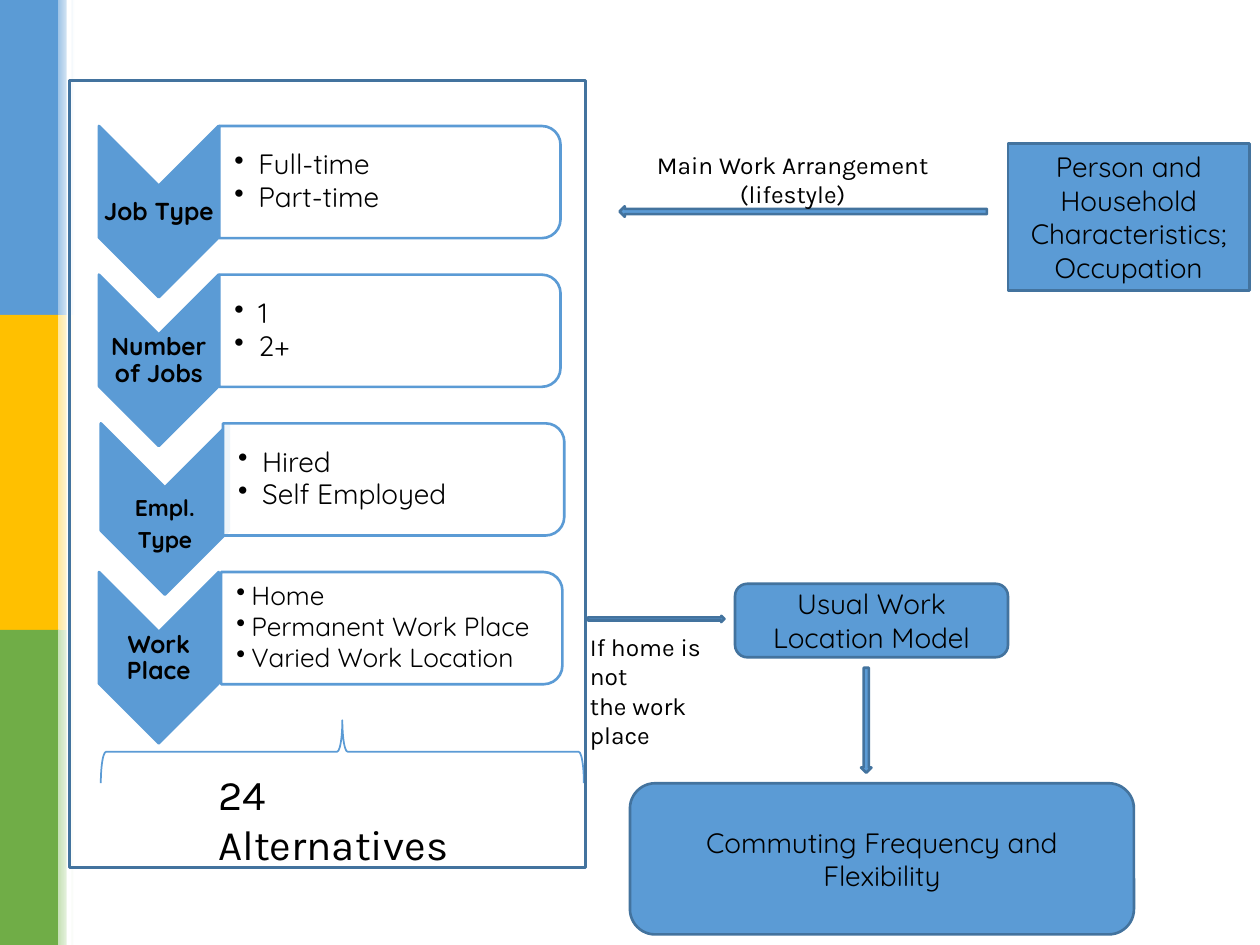
"""Build the work arrangement model slide."""
from lxml.etree import SubElement
from pptx import Presentation
from pptx.dml.color import RGBColor
from pptx.enum.shapes import MSO_SHAPE as Shape
from pptx.enum.text import MSO_ANCHOR as Anchor, PP_ALIGN as Align
from pptx.oxml.ns import qn
from pptx.util import Inches, Pt

COLUMNS, ROWS = 120, 90
BLUE, EDGE, BLACK, WHITE = "5B9BD5", "43739E", "000000", "FFFFFF"


def color(value):
    return RGBColor.from_string(value)


class Board:
    def __init__(self, presentation):
        self.slide = presentation.slides.add_slide(presentation.slide_layouts[6])
        self.column = presentation.slide_width / COLUMNS
        self.row = presentation.slide_height / ROWS

    def box(self, left, top, width, height):
        return (round(left * self.column), round(top * self.row),
                round(width * self.column), round(height * self.row))

    def shape(self, kind, area, fill=None, line=None, weight=1.5):
        shape = self.slide.shapes.add_shape(kind, *self.box(*area))
        shape.shadow.inherit = False
        if fill:
            shape.fill.solid()
            shape.fill.fore_color.rgb = color(fill)
        else:
            shape.fill.background()
        if line:
            shape.line.color.rgb = color(line)
            shape.line.width = Pt(weight)
        else:
            shape.line.fill.background()
        return shape

    def turned(self, kind, area, **style):
        left, top, width, height = area
        shift = (width - height) / 2
        shape = self.shape(kind, (left + shift, top - shift, height, width), **style)
        shape.rotation = 90
        return shape

    def fade(self, area, start):
        shape = self.shape(Shape.RECTANGLE, area)
        shape.fill.gradient()
        shape.fill.gradient_angle = 0
        for stop, value in zip(shape.fill.gradient_stops, (start, WHITE)):
            stop.color.rgb = color(value)

    def set_text(self, shape, lines, size, font="Quicksand", align=Align.CENTER,
                 bold=False, spacing=None, after=0):
        frame = shape.text_frame
        frame.word_wrap = True
        frame.text = "\n".join(lines)
        for paragraph in frame.paragraphs:
            paragraph.alignment = align
            paragraph.line_spacing = spacing
            paragraph.space_after = Pt(after)
            for run in paragraph.runs:
                run.font.name, run.font.size, run.font.bold = font, Pt(size), bold
                run.font.color.rgb = color(BLACK)
        return frame

    def text(self, area, lines, size, inset=None, **style):
        shape = self.slide.shapes.add_textbox(*self.box(*area))
        frame = self.set_text(shape, lines, size, **style)
        if inset is not None:
            frame.vertical_anchor = Anchor.MIDDLE
            frame.margin_left = Inches(inset)
            frame.margin_top = frame.margin_right = frame.margin_bottom = Inches(0.01)
        return frame

    def bullets(self, area, lines, size, indent):
        frame = self.text(area, lines, size, inset=0.12, align=Align.LEFT,
                          spacing=0.9, after=1.5)
        for paragraph in frame.paragraphs:
            properties = paragraph._p.get_or_add_pPr()
            properties.set("marL", str(Inches(indent)))
            properties.set("indent", str(-Inches(indent)))
            SubElement(properties, qn("a:buChar")).set("char", "•")

    def node(self, kind, area, label):
        shape = self.shape(kind, area, BLUE, EDGE)
        self.set_text(shape, [label], 16).vertical_anchor = Anchor.MIDDLE

    def step(self, top, label, items, chevron, body, size=16, indent=0.19,
             label_size=14, label_shift=0):
        left, width = chevron
        self.turned(Shape.CHEVRON, (left, top, width, 16.32), fill=BLUE, line=BLUE)
        self.text((left, top + 5.76 + label_shift, width, 4.92), label, label_size,
                  inset=0.01, bold=True, spacing=0.9, after=4)
        panel = self.turned(Shape.ROUND_2_SAME_RECTANGLE, (body, top, 32.5, 10.68),
                            fill=WHITE, line=BLUE)
        fill_color = panel._element.spPr.find(qn("a:solidFill"))[0]
        SubElement(fill_color, qn("a:alpha")).set("val", "90000")
        self.bullets((body, top + 0.55, 32, 9.6), items, size, indent)


def main():
    presentation = Presentation()
    presentation.slide_width, presentation.slide_height = Inches(10), Inches(7.5)
    board = Board(presentation)

    bands = [(BLUE, "9DC3E6"), ("FFC000", "FFE699"), ("70AD47", "C5E0B4")]
    for index, (solid, pale) in enumerate(bands):
        board.shape(Shape.RECTANGLE, (0, 30 * index, 5.64, 30), solid)
        board.fade((5.52, 30 * index, 1.56, 30), pale)
    board.shape(Shape.RECTANGLE, (6.36, 0, 0.48, ROWS), WHITE)

    narrow, wide = (9.42, 11.4), (9.6, 12.2)
    steps = [
        dict(label=["Job Type"], items=["Full-time", "Part-time"],
             chevron=narrow, body=20.88),
        dict(label=["Number of Jobs"], items=["1", "2+"], chevron=narrow, body=20.88),
        dict(label=["Empl.", "Type"], items=["Hired", "Self Employed"],
             chevron=wide, body=21.24, label_size=13, label_shift=1.5),
        dict(label=["Work Place"],
             items=["Home", "Permanent Work Place", "Varied Work Location"],
             chevron=narrow, body=21.06, size=15, indent=0.12),
    ]
    for index, step in enumerate(steps):
        board.step(12 + 14.16 * index, **step)

    board.turned(Shape.LEFT_BRACE, (9.6, 68.6, 46, 6), line=BLUE, weight=1)
    notes = dict(font="Karla", align=Align.LEFT)
    board.text((19.6, 72.6, 28, 4.8), ["24 Alternatives"], 24, **notes)
    board.shape(Shape.RIGHT_ARROW, (56, 58.65, 13, 0.6), BLUE, EDGE)
    board.text((55, 59.6, 15, 12.5), ["If home is not", "the work place"], 14, **notes)
    board.node(Shape.ROUNDED_RECTANGLE, (70, 55.6, 26, 7), "Usual Work Location Model")
    board.shape(Shape.DOWN_ARROW, (82, 63.6, 1, 10), BLUE, EDGE)
    board.node(Shape.ROUNDED_RECTANGLE, (60, 74.6, 48, 14.4),
               "Commuting Frequency and Flexibility")
    board.shape(Shape.RECTANGLE, (6.6, 7.65, 49.2, 75), line=EDGE)
    board.node(Shape.RECTANGLE, (96, 13.65, 23, 14),
               "Person and Household Characteristics; Occupation")
    board.shape(Shape.LEFT_ARROW, (59, 19.65, 35, 1), BLUE, EDGE)
    board.text((60, 13.65, 31, 9.7), ["Main Work Arrangement (lifestyle)"], 14,
               font="Karla")
    presentation.save("out.pptx")


if __name__ == "__main__":
    main()
